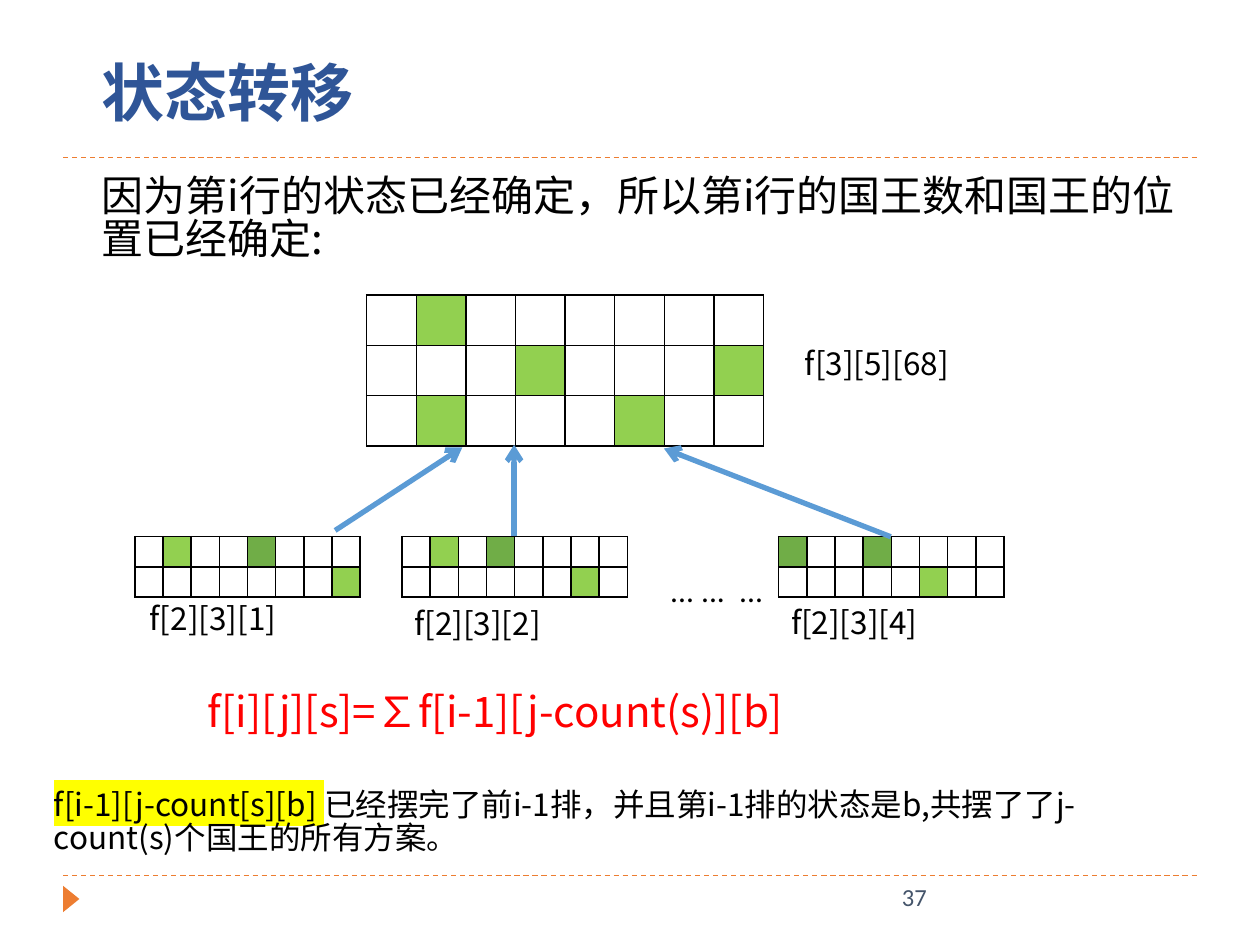
from pptx import Presentation
from pptx.dml.color import RGBColor
from pptx.enum.dml import MSO_LINE
from pptx.enum.shapes import MSO_CONNECTOR, MSO_SHAPE
from pptx.oxml.ns import qn
from pptx.util import Inches, Pt
from lxml import etree

STRAIGHT = MSO_CONNECTOR.STRAIGHT
TRIANGLE = MSO_SHAPE.ISOSCELES_TRIANGLE
DASH = MSO_LINE.DASH

BLACK = RGBColor(0x00, 0x00, 0x00)
WHITE = RGBColor(0xFF, 0xFF, 0xFF)
RED = RGBColor(0xFF, 0x00, 0x00)
ORANGE = RGBColor(0xED, 0x7D, 0x31)
BLUE = RGBColor(0x5B, 0x9B, 0xD5)
TITLE_BLUE = RGBColor(0x2F, 0x55, 0x97)
SLATE = RGBColor(0x44, 0x54, 0x6A)
LIME = RGBColor(0x92, 0xD0, 0x50)
GREEN = RGBColor(0x70, 0xAD, 0x47)
YELLOW = RGBColor(0xFF, 0xFF, 0x00)

LATIN = "Calibri"
CJK = "Noto Sans CJK SC"

prs = Presentation()
prs.slide_width, prs.slide_height = Inches(10), Inches(7.5)
slide = prs.slides.add_slide(prs.slide_layouts[6])


def add_text(box, pieces, size, color=BLACK, font=CJK, spacing=0.85):
    frame = slide.shapes.add_textbox(*[Inches(v) for v in box]).text_frame
    frame.word_wrap = True
    paragraph = frame.paragraphs[0]
    paragraph.line_spacing = spacing
    for piece in pieces:
        run = paragraph.add_run()
        run.text = piece
        run.font.size = Pt(size)
        run.font.color.rgb = color
        run.font.name = font
        east_asian = etree.SubElement(run._r.rPr, qn("a:ea"))
        east_asian.set("typeface", CJK)
    return frame


def add_line(start, end, color, width):
    line = slide.shapes.add_connector(STRAIGHT, *[Inches(v) for v in start + end])
    line.line.color.rgb = color
    line.line.width = Pt(width)
    etree.SubElement(line._element.spPr, qn("a:effectLst"))
    return line


# Dashed rules, corner marker and page number
for y in (1.25, 6.95):
    add_line((0.5, y), (9.5, y), ORANGE, 0.75).line.dash_style = DASH

marker = slide.shapes.add_shape(TRIANGLE, Inches(0.46), Inches(7.07), Inches(0.21), Inches(0.13))
marker.rotation = 90
marker.shadow.inherit = False
marker.fill.solid()
marker.fill.fore_color.rgb = ORANGE
marker.line.fill.background()

add_text((7.06, 6.95, 2.25, 0.4), ["37"], 14, SLATE, LATIN, 1.0)

# Title and introduction
title = add_text((0.71, 0.47, 2.2, 0.71), ["状态转移"], 36, TITLE_BLUE, LATIN)
title.word_wrap = False
title.paragraphs[0].runs[0].font.bold = True
add_text((0.71, 1.36, 8.76, 0.91),
         ["因为第i行的状态已经确定，所以第i行的国王数和国王的位置已经确定:"], 24)

# Boards: left, top, cell width, cell height, rows (k = king, d = dark king)
KING_FILLS = {".": WHITE, "k": LIME, "d": GREEN}
boards = [
    (2.91, 2.34, 0.39, 0.4, [".k......", "...k...k", ".k...k.."]),
    (1.07, 4.26, 0.22, 0.24, [".k..d...", ".......k"]),
    (3.19, 4.26, 0.22, 0.24, [".k.d....", "......k."]),
    (6.18, 4.26, 0.22, 0.24, ["d..d....", ".....k.."]),
]
for left, top, cell_width, cell_height, rows in boards:
    columns = len(rows[0])
    board = slide.shapes.add_table(
        len(rows), columns, Inches(left), Inches(top),
        Inches(cell_width * columns), Inches(cell_height * len(rows))).table
    for column in board.columns:
        column.width = Inches(cell_width + 0.004)
    for r, row in enumerate(rows):
        board.rows[r].height = Inches(cell_height)
        for c, mark in enumerate(row):
            cell = board.cell(r, c)
            cell.margin_left = cell.margin_right = 0
            cell.margin_top = cell.margin_bottom = 0
            # A small end mark keeps the empty rows low
            end_mark = etree.SubElement(cell.text_frame.paragraphs[0]._p, qn("a:endParaRPr"))
            end_mark.set("sz", "800")
            borders = cell._tc.get_or_add_tcPr()
            for side in ("a:lnL", "a:lnR", "a:lnT", "a:lnB"):
                border = etree.SubElement(borders, qn(side), w=str(Pt(1)))
                ink = etree.SubElement(border, qn("a:solidFill"))
                etree.SubElement(ink, qn("a:srgbClr"), val=str(BLACK))
            cell.fill.solid()
            cell.fill.fore_color.rgb = KING_FILLS[mark]

# State labels
for left, top, state in [
    (6.29, 2.73, "f[3][5][68]"),
    (1.09, 4.75, "f[2][3][1]"),
    (3.19, 4.79, "f[2][3][2]"),
    (6.18, 4.78, "f[2][3][4]"),
]:
    add_text((left, top, 1.5, 0.4), [state], 18)
add_text((5.22, 4.48, 1.25, 0.4), ["... ...  ..."], 18, font=LATIN, spacing=1.0)

# Arrows from the earlier states to the current one
for start, end in [
    ((2.66, 4.21), (3.67, 3.55)),
    ((4.08, 4.25), (4.08, 3.53)),
    ((7.07, 4.26), (5.27, 3.56)),
]:
    arrow = add_line(start, end, BLUE, 3)
    etree.SubElement(arrow.line._get_or_add_ln(), qn("a:tailEnd"), type="arrow")

# Recurrence and its explanation
add_text((1.55, 5.45, 5.87, 0.5), ["f[i][j][s]=∑f[i-1][j-count(s)][b]"], 24, RED)
explanation = add_text(
    (0.33, 6.23, 8.76, 0.71),
    ["f[i-1][j-count[s][b] ",
     "已经摆完了前i-1排，并且第i-1排的状态是b,共摆了了j-count(s)个国王的所有方案。"], 18)
term = explanation.paragraphs[0].runs[0]._r.rPr
highlight = etree.Element(qn("a:highlight"))
etree.SubElement(highlight, qn("a:srgbClr"), val=str(YELLOW))
term.find(qn("a:solidFill")).addnext(highlight)

prs.save("out.pptx")
